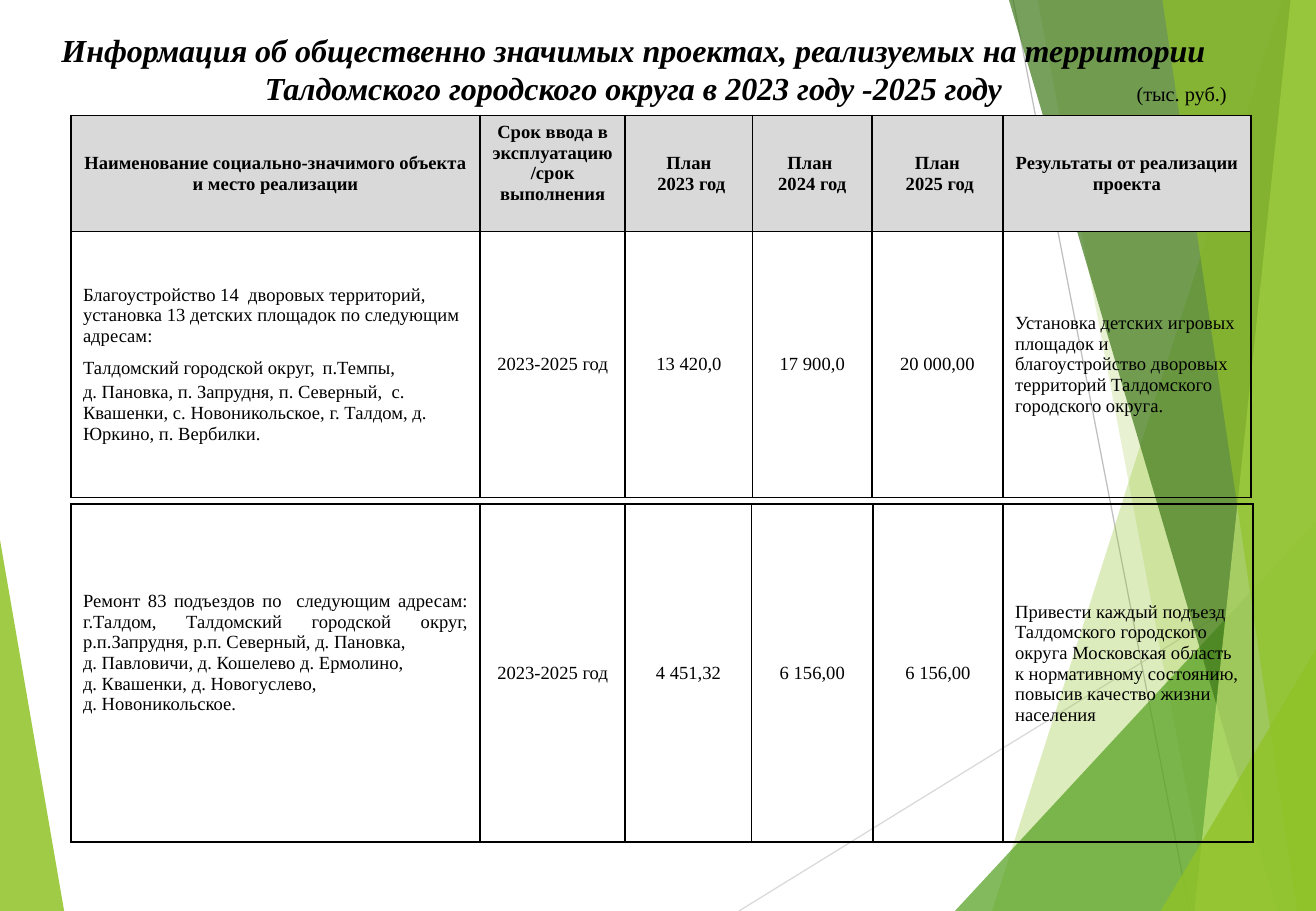
import lxml.etree
import pptx
import pptx.dml.color
import pptx.enum.shapes
import pptx.enum.text
import pptx.oxml.ns
import pptx.util

Pt = pptx.util.Pt
RGB = pptx.dml.color.RGBColor
ALIGN = pptx.enum.text.PP_ALIGN
MIDDLE = pptx.enum.text.MSO_ANCHOR.MIDDLE
qn = pptx.oxml.ns.qn

WIDTH, HEIGHT = 780, 540
BLACK = RGB(0x00, 0x00, 0x00)
HEADER_GREY = RGB(0xD9, 0xD9, 0xD9)
LINE_GREY = RGB(0xBF, 0xBF, 0xBF)
LIME = RGB(0x90, 0xC2, 0x26)
GREEN = RGB(0x54, 0xA0, 0x21)
DARK_GREEN = RGB(0x3F, 0x78, 0x19)
PALE_LIME = RGB(0xC0, 0xE4, 0x74)
FONT = "Times New Roman"

# upper x, upper y, x at the page bottom, colour, opacity in percent
FACETS = [
    (760, 0, 588, LIME, 30),
    (615, 0, 717, LIME, 20),
    (780, 309, 566, GREEN, 72),
    (598, 0, 757, DARK_GREEN, 70),
    (765, 0, 708, PALE_LIME, 70),
    (689, 0, 769, LIME, 65),
    (780, 385, 688, LIME, 80),
]

TITLE = [
    "Информация об общественно значимых проектах, реализуемых на территории",
    "Талдомского городского округа в 2023 году -2025 году",
]
# Each cell is a list of paragraphs
HEADER = [
    ["Наименование социально-значимого объекта и место реализации"],
    ["Срок ввода в эксплуатацию /срок выполнения"],
    ["План", " 2023 год"],
    ["План ", "2024 год"],
    ["План", " 2025 год"],
    ["Результаты от реализации проекта"],
]
YARDS = [
    ["Благоустройство 14  дворовых территорий, установка 13 детских площадок "
     "по следующим адресам:",
     "Талдомский городской округ,",
     "д. Пановка, п. Запрудня, п. Северный,  с. Квашенки, с. Новоникольское, "
     "г. Талдом, д. Юркино, п. Вербилки."],
    ["2023-2025 год"], ["13 420,0"], ["17 900,0"], ["20 000,00"],
    ["Установка детских игровых площадок и благоустройство дворовых "
     "территорий Талдомского городского округа."],
]
ENTRANCES = [
    ["Ремонт 83 подъездов по  следующим адресам: г.Талдом, Талдомский "
     "городской округ, р.п.Запрудня, р.п. Северный, д. Пановка, ",
     "д. Павловичи, д. Кошелево д. Ермолино, ",
     "д. Квашенки, д. Новогуслево, ",
     "д. Новоникольское."],
    ["2023-2025 год"], ["4 451,32"], ["6 156,00"], ["6 156,00"],
    ["Привести каждый подъезд Талдомского городского округа Московская "
     "область к нормативному состоянию, повысив качество жизни населения"],
]


def add_span(para, text, size=11, font=FONT, bold=False, italic=False):
    span = para.add_run()
    span.text = text
    span.font.size = Pt(size)
    span.font.name = font
    span.font.bold = bold
    span.font.italic = italic
    span.font.color.rgb = BLACK


def write(frame, lines, align=ALIGN.LEFT, **style):
    """Fill a text frame with one paragraph per line."""
    for index, line in enumerate(lines):
        para = frame.add_paragraph() if index else frame.paragraphs[0]
        para.alignment = align
        add_span(para, line, **style)


def add_label(page, lines, left, top, width, height, **style):
    box = page.shapes.add_textbox(Pt(left), Pt(top), Pt(width), Pt(height))
    frame = box.text_frame
    frame.margin_left = frame.margin_top = 0
    frame.margin_right = frame.margin_bottom = 0
    frame.word_wrap = True
    write(frame, lines, **style)


def add_facet(page, points, colour, opacity):
    builder = page.shapes.build_freeform(*points[0], scale=Pt(1))
    builder.add_line_segments(points[1:], close=True)
    facet = builder.convert_to_shape()
    facet.shadow.inherit = False
    facet.line.fill.background()
    facet.fill.solid()
    facet.fill.fore_color.rgb = colour
    tint = facet.fill._xPr.find(qn("a:solidFill"))[0]
    lxml.etree.SubElement(tint, qn("a:alpha"), val=str(opacity * 1000))


def add_ray(page, start, end, colour):
    ray = page.shapes.add_connector(
        pptx.enum.shapes.MSO_CONNECTOR.STRAIGHT,
        *(Pt(value) for value in start + end))
    ray.line.color.rgb = colour
    ray.line.width = Pt(0.75)
    lxml.etree.SubElement(ray._element.spPr, qn("a:effectLst"))


def add_backdrop(page, width, height):
    add_facet(page, [(0, 320), (38, height), (0, height)], LIME, 85)
    add_ray(page, (438, height), (width, 329), HEADER_GREY)
    add_ray(page, (600.5, 0), (705, height), LINE_GREY)
    for x, y, foot, colour, opacity in FACETS:
        points = [(x, y), (foot, height), (width, height), (width, y)]
        add_facet(page, points, colour, opacity)


def add_borders(cell):
    props = cell._tc.get_or_add_tcPr()
    for index, side in enumerate(("lnL", "lnR", "lnT", "lnB")):
        line = lxml.etree.Element(qn("a:" + side), w=str(Pt(1)))
        fill = lxml.etree.SubElement(line, qn("a:solidFill"))
        lxml.etree.SubElement(fill, qn("a:srgbClr"), val=str(BLACK))
        props.insert(index, line)


def add_projects(page, rows, left, top, widths, heights):
    """Draw a bordered table and return it."""
    table = page.shapes.add_table(
        len(rows), len(widths), Pt(left), Pt(top),
        Pt(sum(widths)), Pt(sum(heights))).table
    table.first_row = table.horz_banding = False
    for column, width in zip(table.columns, widths):
        column.width = Pt(width)
    for row, height in zip(table.rows, heights):
        row.height = Pt(height)
    for y, cells in enumerate(rows):
        is_header = cells is HEADER
        for x, lines in enumerate(cells):
            cell = table.cell(y, x)
            cell.vertical_anchor = MIDDLE
            if is_header:
                cell.fill.solid()
                cell.fill.fore_color.rgb = HEADER_GREY
            else:
                cell.fill.background()
            add_borders(cell)
            centred = is_header or 0 < x < len(cells) - 1
            write(cell.text_frame, lines, bold=is_header,
                  align=ALIGN.CENTER if centred else ALIGN.LEFT)
    return table


def add_page(deck):
    page = deck.slides.add_slide(deck.slide_layouts[6])
    add_backdrop(page, WIDTH, HEIGHT)
    add_label(page, TITLE, 20.5, 18, 710, 48, align=ALIGN.CENTER,
              size=19, bold=True, italic=True)

    yards = add_projects(page, [HEADER, YARDS], 42, 68.4,
                         [242.6, 86, 75.6, 70.6, 77.8, 146.9], [68.8, 157.7])
    deadline = yards.cell(0, 1)
    deadline.margin_top, deadline.margin_bottom = 0, Pt(12)
    address = yards.cell(1, 0).text_frame.paragraphs[1]
    add_span(address, " ", size=18, font="Roboto")
    add_span(address, "п.Темпы,")

    entrances = add_projects(page, [ENTRANCES], 42, 298.8,
                             [242.6, 86, 74.9, 72, 77, 148.3], [200.4])
    repairs, result = entrances.cell(0, 0), entrances.cell(0, 5)
    repairs.margin_bottom = Pt(27.6)
    result.margin_bottom = Pt(15)
    for para in repairs.text_frame.paragraphs:
        para.alignment = ALIGN.JUSTIFY

    add_label(page, ["(тыс. руб.)"], 673.7, 48.2, 97, 17, size=12)


def main():
    deck = pptx.Presentation()
    deck.slide_width, deck.slide_height = Pt(WIDTH), Pt(HEIGHT)
    add_page(deck)
    deck.save("out.pptx")


if __name__ == "__main__":
    main()
